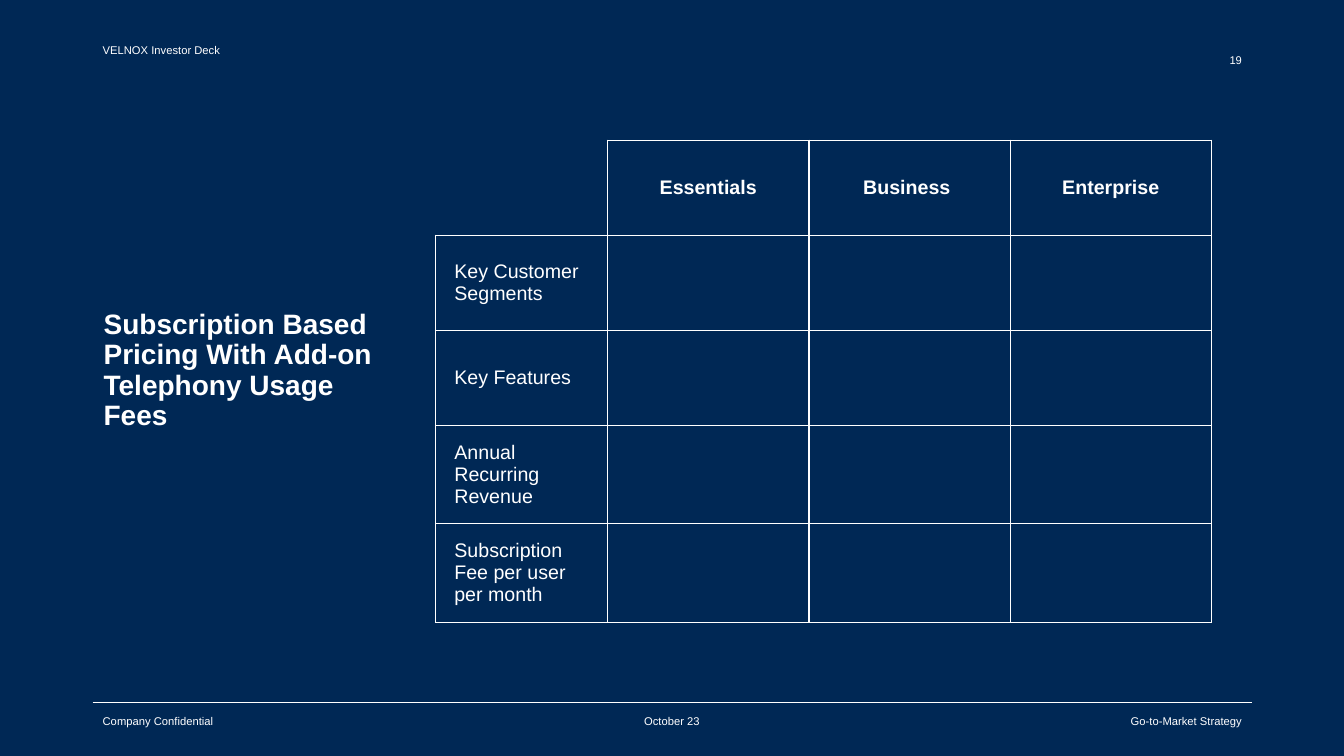
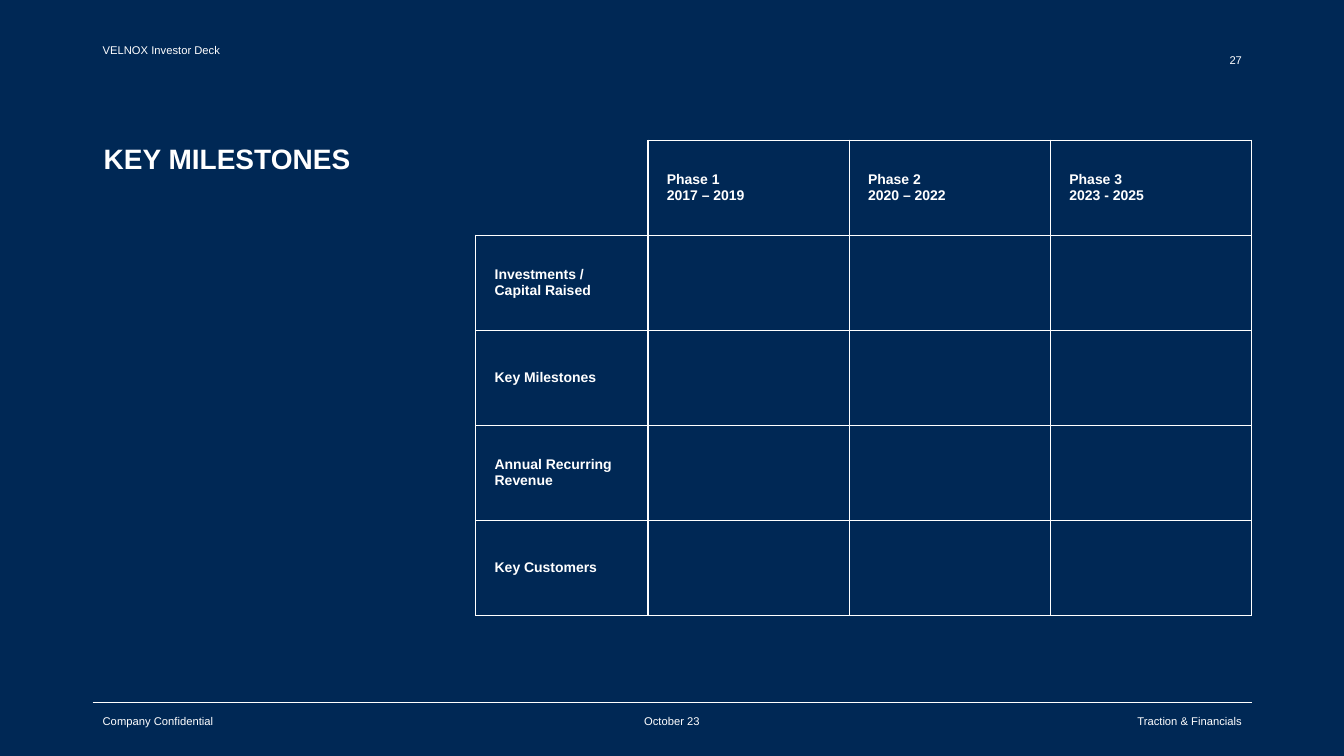
from lxml import etree
from pptx import Presentation
from pptx.dml.color import RGBColor as Rgb
from pptx.enum.shapes import MSO_CONNECTOR as Link
from pptx.enum.text import MSO_ANCHOR as Anchor, PP_ALIGN as Align
from pptx.oxml.ns import qn
from pptx.util import Pt

HUES = {"navy": "002855", "white": "FFFFFF"}
FONT = "Arial"
LEFT, RIGHT = 66.24, 894.24
TOP, FOOT, BAND = 28.8, 500.4, 28.8
COLS = [123, 143.8, 143.8, 143.8]
ROW = 67.9

decks = [
    {
        "page": "19", "part": "Go-to-Market Strategy",
        "title": "Subscription Based Pricing With Add-on Telephony Usage Fees",
        "box": (66.96, 218.16, 223.2, 102.96),
        "left": 311.04, "size": 14, "bold": False, "align": Align.CENTER,
        "heads": ["Essentials", "Business ", "Enterprise"],
        "rows": ["Key Customer Segments", "Key Features",
                 "Annual Recurring Revenue", "Subscription Fee per user per month"],
    },
    {
        "page": "27", "part": "Traction & Financials",
        "title": "KEY MILESTONES",
        "box": (66.96, 100.08, 381.6, 40.32),
        "left": 339.84, "size": 10, "bold": True, "align": Align.LEFT,
        "heads": ["Phase 1\n2017 – 2019", "Phase 2\n2020 – 2022", "Phase 3\n2023 - 2025"],
        "rows": ["Investments / Capital Raised", "Key Milestones",
                 "Annual Recurring Revenue", "Key Customers"],
    },
]


def write(frame, text, size, bold=False, align=Align.LEFT, space=1.0):
    """Fill a text frame, one paragraph for each line of text."""
    frame.word_wrap = True
    for i, line in enumerate(text.split("\n")):
        para = frame.add_paragraph() if i else frame.paragraphs[0]
        para.alignment = align
        para.line_spacing = space
        run = para.add_run()
        run.text = line
        run.font.name = FONT
        run.font.size = Pt(size)
        run.font.bold = bold
        run.font.color.rgb = Rgb.from_string(HUES["white"])


def edge(cell, sides):
    """Draw the named sides (of L, R, T, B) of a cell and hide the others."""
    props = cell._tc.get_or_add_tcPr()
    for side in "LRTB":
        line = etree.SubElement(props, qn(f"a:ln{side}"), w=str(Pt(1)))
        if side in sides:
            fill = etree.SubElement(line, qn("a:solidFill"))
            etree.SubElement(fill, qn("a:srgbClr"), val=HUES["white"])
        else:
            etree.SubElement(line, qn("a:noFill"))


prs = Presentation()
prs.slide_width, prs.slide_height = Pt(960), Pt(540)
back = prs.slide_master.background.fill
back.solid()
back.fore_color.rgb = Rgb.from_string(HUES["navy"])

for deck in decks:
    slide = prs.slides.add_slide(prs.slide_layouts[6])
    shapes = slide.shapes

    # Header and footer
    rule = shapes.add_connector(Link.STRAIGHT, Pt(LEFT), Pt(501.84), Pt(RIGHT), Pt(501.84))
    rule.line.color.rgb = Rgb.from_string(HUES["white"])
    rule.line.width = Pt(0.5)
    etree.SubElement(rule._element.spPr, qn("a:effectLst"))
    labels = [
        ("VELNOX Investor Deck", LEFT, TOP, 191.52, Align.LEFT, Anchor.TOP, 0.9),
        (deck["page"], RIGHT - 216, TOP, 216, Align.RIGHT, Anchor.MIDDLE, 1.0),
        ("Company Confidential", LEFT, FOOT, 135.36, Align.LEFT, Anchor.MIDDLE, 1.0),
        ("October 23", 372, FOOT, 216, Align.CENTER, Anchor.MIDDLE, 1.0),
        (deck["part"], RIGHT - 241.2, FOOT, 241.2, Align.RIGHT, Anchor.MIDDLE, 1.0),
    ]
    for text, x, y, width, align, anchor, space in labels:
        frame = shapes.add_textbox(Pt(x), Pt(y), Pt(width), Pt(BAND)).text_frame
        frame.vertical_anchor = anchor
        write(frame, text, 8, align=align, space=space)

    # Title
    title = shapes.add_textbox(*[Pt(v) for v in deck["box"]])
    write(title.text_frame, deck["title"], 20, bold=True, space=0.9)

    # Table
    count = len(deck["rows"]) + 1
    table = shapes.add_table(count, len(COLS), Pt(deck["left"]), Pt(100.08),
                             Pt(sum(COLS)), Pt(ROW * count)).table
    table.first_row = table.horz_banding = False
    for col, width in zip(table.columns, COLS):
        col.width = Pt(width)
    for r, row in enumerate(table.rows):
        row.height = Pt(ROW)
        for c, cell in enumerate(row.cells):
            edge(cell, "LRTB" if r or c else "RB")
            cell.fill.background()
            cell.vertical_anchor = Anchor.MIDDLE
            cell.margin_left = cell.margin_right = Pt(13.5)
            cell.margin_top = cell.margin_bottom = Pt(10)
            if r == 0 and c:
                write(cell.text_frame, deck["heads"][c - 1], deck["size"], True, deck["align"])
            elif r and c == 0:
                write(cell.text_frame, deck["rows"][r - 1], deck["size"], deck["bold"])

prs.save("out.pptx")
